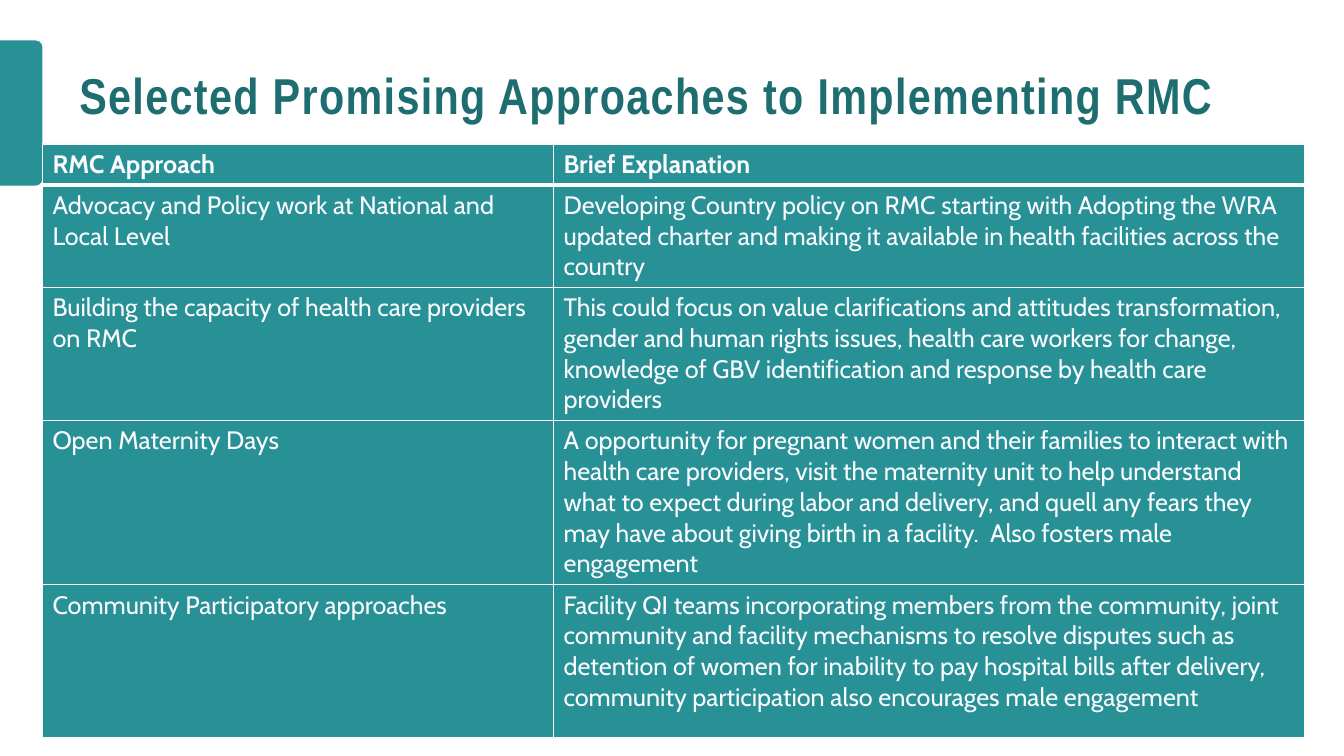
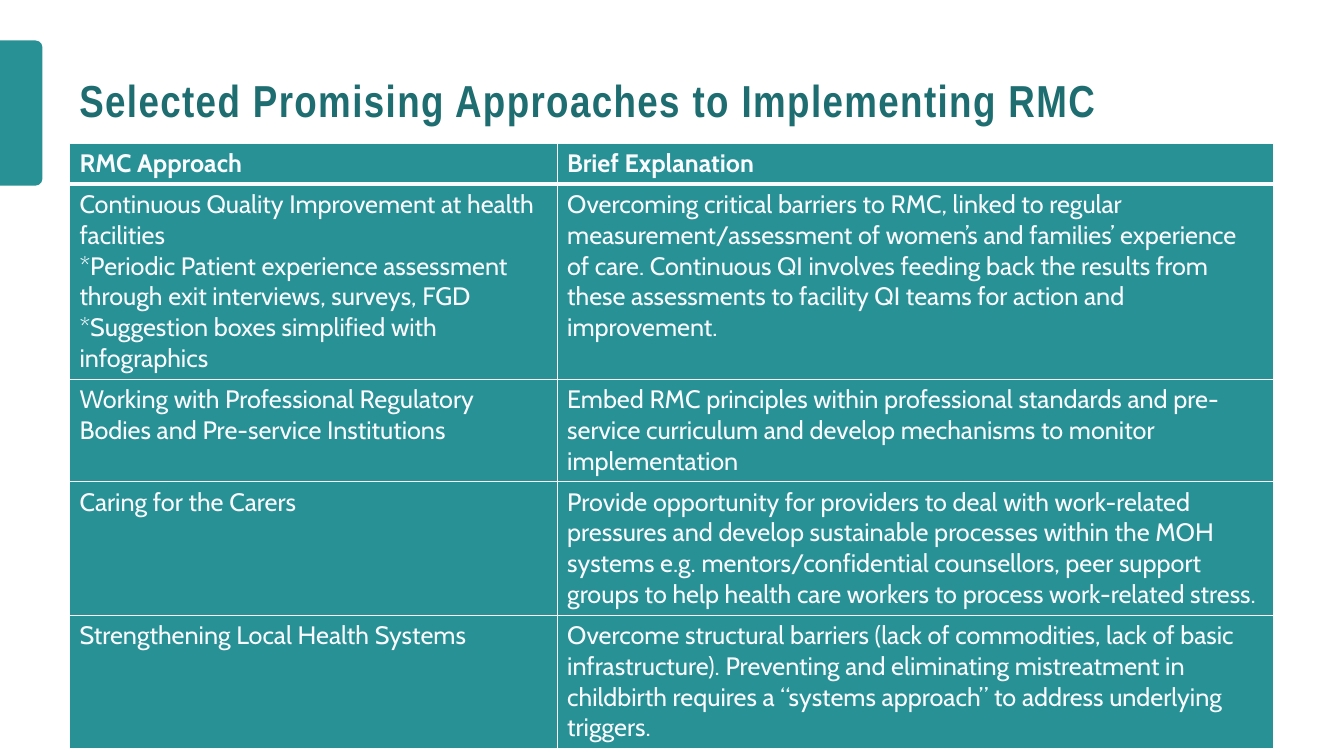
import pptx
import pptx.dml.color
import pptx.enum.shapes
import pptx.enum.text
import pptx.oxml
import pptx.oxml.ns
import pptx.util
from dataclasses import dataclass

Cm = pptx.util.Cm
Pt = pptx.util.Pt


@dataclass(frozen=True)
class Theme:
    teal: str = "289195"
    title_teal: str = "1E6D70"
    pale: str = "FAFBFF"
    title_font: str = "Arial Narrow"
    body_font: str = "Cabin"
    body_size: int = 18
    title_spacing: float = 0.9
    letter_gap: int = 1
    rule: int = 1
    header_rule: int = 3


THEME = Theme()
TITLE = "Selected Promising Approaches to Implementing RMC"
HEADER = ("RMC Approach", "Brief Explanation")

# Content: title size and height, table corner, column widths, row heights, rows
PAGES = [
    dict(
        title_size=36, title_height=1.73, corner=(1.07, 3.63),
        columns=(12.88, 18.92), heights=(1.01, 2.58, 3.35, 4.14, 3.86),
        rows=[
            ("Advocacy and Policy work at National and Local Level",
             "Developing Country policy on RMC starting with Adopting the WRA "
             "updated charter and making it available in health facilities "
             "across the country"),
            ("Building the capacity of health care providers on RMC",
             "This could focus on value clarifications and attitudes "
             "transformation, gender and human rights issues, health care "
             "workers for change, knowledge of GBV identification and response "
             "by health care providers"),
            ("Open Maternity Days",
             "A opportunity for pregnant women and their families to interact "
             "with health care providers, visit the maternity unit to help "
             "understand what to expect during labor and delivery, and quell "
             "any fears they may have about giving birth in a facility.  Also "
             "fosters male engagement"),
            ("Community Participatory approaches",
             "Facility QI teams incorporating members from the community, joint "
             "community and facility mechanisms to resolve disputes such as "
             "detention of women for inability to pay hospital bills after "
             "delivery, community participation also encourages male "
             "engagement"),
        ],
    ),
    dict(
        title_size=32, title_height=2.01, corner=(1.75, 3.61),
        columns=(12.29, 18.06), heights=(1.03, 4.92, 2.58, 3.36, 3.36),
        rows=[
            ("Continuous Quality Improvement at health facilities\n"
             "*Periodic Patient experience assessment through exit interviews, "
             "surveys, FGD\n"
             "*Suggestion boxes simplified with infographics",
             "Overcoming critical barriers to RMC, linked to regular "
             "measurement/assessment of women’s and families’ experience of "
             "care. Continuous QI involves feeding back the results from these "
             "assessments to facility QI teams for action and improvement."),
            ("Working with Professional Regulatory Bodies and Pre-service "
             "Institutions",
             "Embed RMC principles within professional standards and "
             "pre-service curriculum and develop mechanisms to monitor "
             "implementation"),
            ("Caring for the Carers",
             "Provide opportunity for providers to deal with work-related "
             "pressures and develop sustainable processes within the MOH "
             "systems e.g. mentors/confidential counsellors, peer support "
             "groups to help health care workers to process work-related "
             "stress."),
            ("Strengthening Local Health Systems",
             "Overcome structural barriers (lack of commodities, lack of basic "
             "infrastructure). Preventing and eliminating mistreatment in "
             "childbirth requires a “systems approach” to address underlying "
             "triggers."),
        ],
    ),
]


def paint(fill, color):
    fill.solid()
    fill.fore_color.rgb = pptx.dml.color.RGBColor.from_string(color)


def set_font(para, name, size, color, bold):
    font = para.font
    font.name, font.size, font.bold = name, Pt(size), bold
    font.color.rgb = pptx.dml.color.RGBColor.from_string(color)


def add_side_tab(page):
    """Teal tab on the left edge, its rounded corners turned to the right."""
    length, depth, top = 3.66, 1.07, 1.02
    tab = page.shapes.add_shape(
        pptx.enum.shapes.MSO_SHAPE.ROUND_2_SAME_RECTANGLE,
        Cm((depth - length) / 2), Cm(top + (length - depth) / 2),
        Cm(length), Cm(depth))
    tab.rotation = 90
    tab.shadow.inherit = False
    paint(tab.fill, THEME.teal)
    tab.line.fill.background()


def add_title(page, size, height):
    box = page.shapes.add_textbox(Cm(1.75), Cm(1.6), Cm(30.35), Cm(height))
    frame = box.text_frame
    frame.word_wrap = True
    frame.vertical_anchor = pptx.enum.text.MSO_ANCHOR.MIDDLE
    para = frame.paragraphs[0]
    para.line_spacing = THEME.title_spacing
    span = para.add_run()
    span.text = TITLE
    span._r.get_or_add_rPr().set("spc", str(THEME.letter_gap * 100))
    set_font(para, THEME.title_font, size, THEME.title_teal, True)


def set_borders(cell, top, bottom):
    """Draw the four cell borders; they must come before the cell's fill."""
    widths = {"lnL": THEME.rule, "lnR": THEME.rule, "lnT": top, "lnB": bottom}
    properties = cell._tc.get_or_add_tcPr()
    for index, (side, width) in enumerate(widths.items()):
        properties.insert(index, pptx.oxml.parse_xml(
            f'<a:{side} {pptx.oxml.ns.nsdecls("a")} w="{Pt(width)}">'
            f'<a:solidFill><a:srgbClr val="{THEME.pale}"/></a:solidFill>'
            f'</a:{side}>'))


def add_approach_table(page, corner, columns, heights, rows):
    left, top = corner
    table = page.shapes.add_table(
        len(heights), len(columns), Cm(left), Cm(top),
        Cm(sum(columns)), Cm(sum(heights))).table
    table.horz_banding = False
    for column, width in zip(table.columns, columns):
        column.width = Cm(width)
    for number, (row, height, texts) in enumerate(
            zip(table.rows, heights, [HEADER, *rows])):
        row.height = Cm(height)
        for cell, text in zip(row.cells, texts):
            cell.text_frame.text = text
            for para in cell.text_frame.paragraphs:
                set_font(para, THEME.body_font, THEME.body_size, THEME.pale,
                         number == 0)
            paint(cell.fill, THEME.teal)
            set_borders(cell,
                        THEME.header_rule if number == 1 else THEME.rule,
                        THEME.header_rule if number == 0 else THEME.rule)


def main():
    deck = pptx.Presentation()
    deck.slide_width, deck.slide_height = Cm(33.87), Cm(19.05)
    blank = deck.slide_layouts[6]
    for content in PAGES:
        page = deck.slides.add_slide(blank)
        add_side_tab(page)
        add_approach_table(page, content["corner"], content["columns"],
                           content["heights"], content["rows"])
        add_title(page, content["title_size"], content["title_height"])
    deck.save("out.pptx")


if __name__ == "__main__":
    main()
